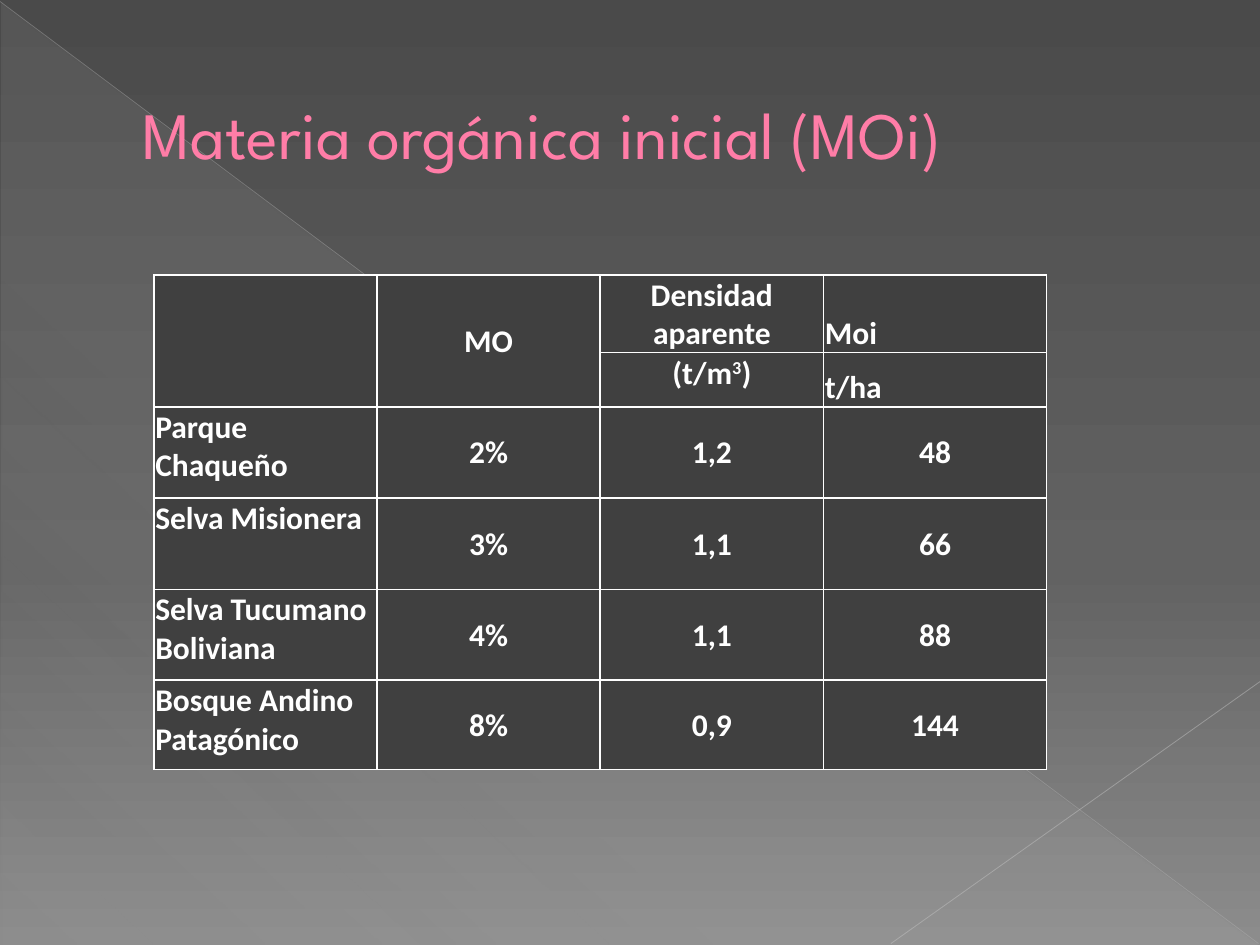
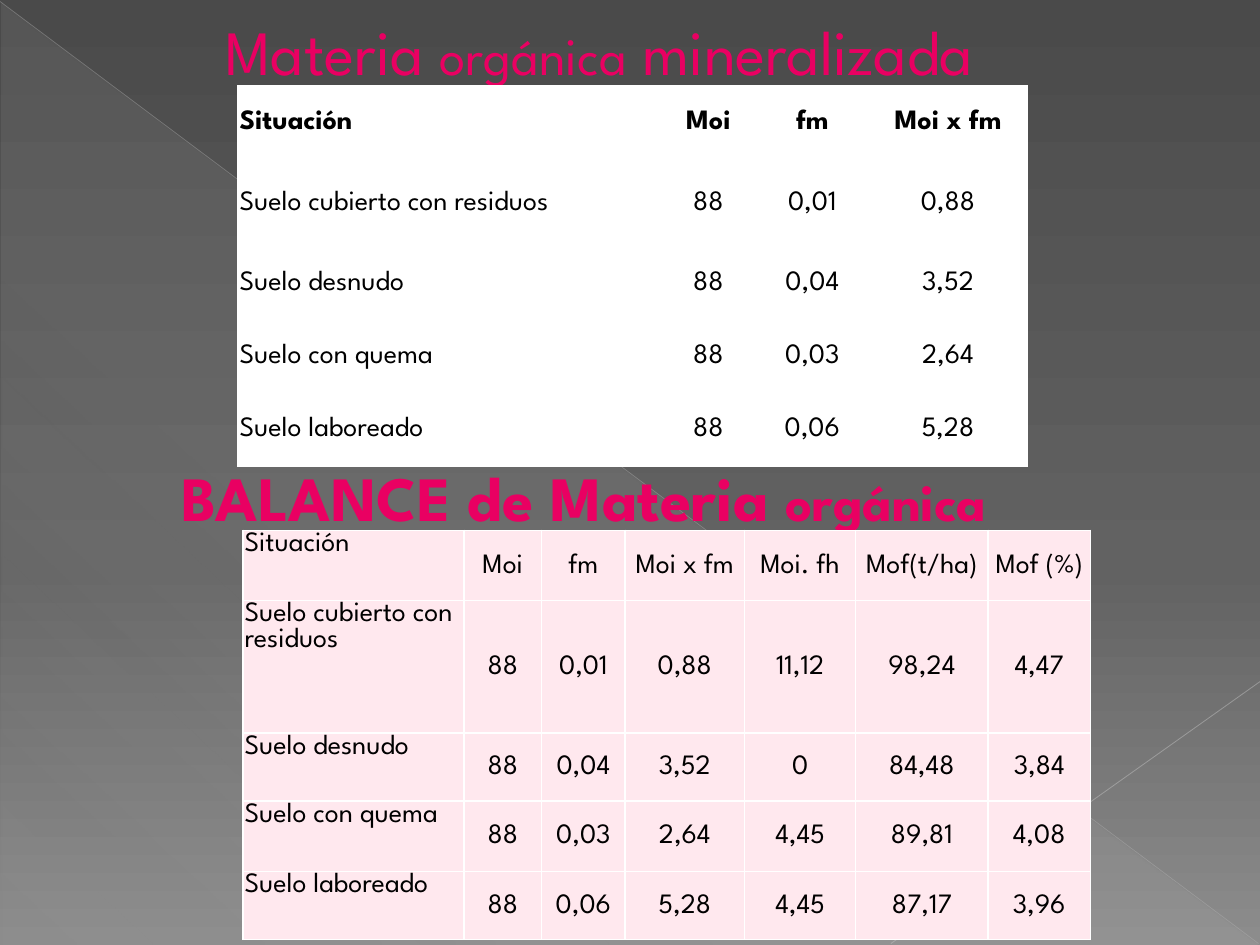
from dataclasses import dataclass, field

from lxml.etree import SubElement
from pptx import Presentation
from pptx.dml.color import RGBColor
from pptx.enum.shapes import MSO_CONNECTOR, MSO_SHAPE
from pptx.enum.text import MSO_ANCHOR, PP_ALIGN
from pptx.oxml import parse_xml
from pptx.oxml.ns import nsdecls, qn
from pptx.util import Cm, Pt

COLORS = {
    "bg_top": "4A4A4A", "bg_mid": "626262", "bg_bottom": "8C8C8C",
    "veil": "D2D2D2", "diagonal": "BFBFBF", "corner": "C6C6C6",
    "title": "FF7DA7", "title_edge": "B12761", "heading": "E90062",
    "dark": "404040", "white": "FFFFFF", "black": "000000", "pale_pink": "FFE8EE",
}
TITLE_FONT = "League Spartan"
TABLE_FONT = "Calibri"
LEFT_TOP = (PP_ALIGN.LEFT, MSO_ANCHOR.TOP)
LEFT_MIDDLE = (PP_ALIGN.LEFT, MSO_ANCHOR.MIDDLE)
LEFT_BOTTOM = (PP_ALIGN.LEFT, MSO_ANCHOR.BOTTOM)
CENTER_TOP = (PP_ALIGN.CENTER, MSO_ANCHOR.TOP)
CENTER_MIDDLE = (PP_ALIGN.CENTER, MSO_ANCHOR.MIDDLE)


@dataclass
class Run:
    text: str
    size: float
    bold: bool = False
    superscript: bool = False


@dataclass
class Line:
    start: tuple[float, float]
    end: tuple[float, float]
    color: str
    width: float
    opacity: int


@dataclass
class Heading:
    left: float
    top: float
    runs: list[Run]


@dataclass
class Grid:
    """Lengths in cm; a cell is a string or a list of runs."""
    left: float
    top: float
    cols: list[float]
    rows: list[float]
    cells: list[list]
    fill: str
    color: str
    font: str
    size: float
    bold_rows: int = 0
    first_col: tuple = LEFT_TOP
    placing: dict = field(default_factory=dict)
    merges: list = field(default_factory=list)


BACKDROP_LINES = [
    Line((0, 0.03), (25.37, 19.02), "diagonal", 0.39, 35),
    Line((25.4, 13.74), (17.96, 19.02), "corner", 0.47, 45),
]

INITIAL_MATTER = Grid(
    3.1, 5.54, [4.5] * 4, [1.57, 1.09, 1.84, 1.84, 1.83, 1.8],
    [
        ["", "MO", "Densidad aparente", "Moi"],
        ["", "", [Run("(t/m", 18, True), Run("3", 18, True, True), Run(")", 18, True)], "t/ha"],
        ["Parque Chaqueño", "2%", "1,2", "48"],
        ["Selva Misionera", "3%", "1,1", "66"],
        ["Selva Tucumano Boliviana", "4%", "1,1", "88"],
        ["Bosque Andino Patagónico", "8%", "0,9", "144"],
    ],
    "dark", "white", TABLE_FONT, 18, bold_rows=6,
    placing={(0, 2): CENTER_TOP, (1, 2): CENTER_TOP, (0, 3): LEFT_BOTTOM, (1, 3): LEFT_BOTTOM},
    merges=[((0, 0), (1, 0)), ((0, 1), (1, 1))],
)

MINERALIZED = Grid(
    4.8, 1.73, [8.53, 1.9, 2.29, 3.18], [1.47, 1.78, 1.47, 1.47, 1.47],
    [
        ["Situación", "Moi", "fm", "Moi x fm"],
        ["Suelo cubierto con residuos", "88", "0,01", "0,88"],
        ["Suelo desnudo", "88", "0,04", "3,52"],
        ["Suelo con quema", "88", "0,03", "2,64"],
        ["Suelo laboreado", "88", "0,06", "5,28"],
    ],
    "white", "black", TITLE_FONT, 16, bold_rows=1, first_col=LEFT_MIDDLE,
)

# The balance extends each mineralization row with three more columns
BALANCE_COLUMNS = [
    ["Moi. fh", "Mof(t/ha)", "Mof (%)"],
    ["11,12", "98,24", "4,47"],
    ["0", "84,48", "3,84"],
    ["4,45", "89,81", "4,08"],
    ["4,45", "87,17", "3,96"],
]
BALANCE = Grid(
    4.9, 10.69, [4.45, 1.57, 1.68, 2.41, 2.24, 2.67, 2.06], [1.42, 2.67, 1.37, 1.42, 1.37],
    [base + extra for base, extra in zip(MINERALIZED.cells, BALANCE_COLUMNS)],
    "pale_pink", "black", TITLE_FONT, 16,
)

HEADINGS = [
    Heading(4.29, 0.13, [Run("Materia ", 36), Run("orgánica", 30), Run(" mineralizada", 36)]),
    Heading(3.4, 9.12, [Run("BALANCE de Materia ", 36, True), Run("orgánica", 30, True)]),
]


def rgb(name: str) -> RGBColor:
    return RGBColor.from_string(COLORS[name])


def gradient(stops: list[tuple[int, str, int]], angle: int):
    """Gradient fill from (position %, colour, opacity %) stops."""
    gs = "".join(
        f'<a:gs pos="{pos * 1000}"><a:srgbClr val="{COLORS[color]}">'
        f'<a:alpha val="{opacity * 1000}"/></a:srgbClr></a:gs>'
        for pos, color, opacity in stops
    )
    return parse_xml(f'<a:gradFill {nsdecls("a")} rotWithShape="1"><a:gsLst>{gs}</a:gsLst>'
                     f'<a:lin ang="{angle * 60000}" scaled="0"/></a:gradFill>')


def replace_solid_fill(parent, fill) -> None:
    parent.replace(parent.find(qn("a:solidFill")), fill)


def edge(tag: str, color: str, width: float):
    return parse_xml(f'<a:{tag} {nsdecls("a")} w="{Pt(width)}"><a:solidFill>'
                     f'<a:srgbClr val="{COLORS[color]}"/></a:solidFill></a:{tag}>')


def add_runs(p, runs: list[Run], font: str, color: str) -> None:
    for run in runs:
        r = p.add_run()
        r.text = run.text
        r.font.name = font
        r.font.size = Pt(run.size)
        r.font.bold = run.bold
        r.font.color.rgb = rgb(color)
        if run.superscript:
            r.font._element.set("baseline", "30000")


def draw_line(s, line: Line) -> None:
    c = s.shapes.add_connector(MSO_CONNECTOR.STRAIGHT, *map(Cm, line.start + line.end))
    c.line.color.rgb = rgb(line.color)
    c.line.width = Pt(line.width)
    clr = c._element.spPr.find(".//" + qn("a:srgbClr"))
    SubElement(clr, qn("a:alpha")).set("val", str(line.opacity * 1000))
    SubElement(c._element.spPr, qn("a:effectLst"))


def add_slide(prs):
    """Blank slide with the shared gradient, veil and diagonal lines."""
    s = prs.slides.add_slide(prs.slide_layouts[6])
    s.background.fill.solid()
    replace_solid_fill(s._element.cSld.bg.bgPr, gradient(
        [(0, "bg_top", 100), (60, "bg_mid", 100), (100, "bg_bottom", 100)], 90))
    veil = s.shapes.add_shape(MSO_SHAPE.RIGHT_TRIANGLE, Cm(0.03), Cm(0.05), Cm(25.35), Cm(19))
    veil.shadow.inherit = False
    veil.line.fill.background()
    veil.fill.solid()
    replace_solid_fill(veil._element.spPr, gradient(
        [(0, "veil", 10), (70, "veil", 8), (100, "veil", 1)], 133))
    for line in BACKDROP_LINES:
        draw_line(s, line)
    return s


def draw_title(s, text: str) -> None:
    sp = s.shapes.add_textbox(Cm(1.27), Cm(0.74), Cm(22.86), Cm(3.89))
    tf = sp.text_frame
    tf.word_wrap = True
    tf.vertical_anchor = MSO_ANCHOR.MIDDLE
    tf.margin_left = Cm(1.6)
    p = tf.paragraphs[0]
    add_runs(p, [Run(text, 37.8)], TITLE_FONT, "title")
    p.runs[0].font._element.insert(0, edge("ln", "title_edge", 0.5))


def draw_heading(s, heading: Heading) -> None:
    sp = s.shapes.add_textbox(Cm(heading.left), Cm(heading.top), Cm(18.59), Cm(1.8))
    tf = sp.text_frame
    tf.word_wrap = True
    add_runs(tf.paragraphs[0], heading.runs, TITLE_FONT, "heading")


def draw_cell(cell, grid: Grid, row: int, col: int) -> None:
    default = CENTER_MIDDLE if col else grid.first_col
    align, cell.vertical_anchor = grid.placing.get((row, col), default)
    cell.margin_left = cell.margin_right = cell.margin_top = Cm(0.03)
    cell.margin_bottom = 0
    cell.fill.solid()
    cell.fill.fore_color.rgb = rgb(grid.fill)
    for i, tag in enumerate(("lnL", "lnR", "lnT", "lnB")):
        cell._tc.get_or_add_tcPr().insert(i, edge(tag, "white", 1))
    content = grid.cells[row][col]
    if isinstance(content, str):
        content = [Run(content, grid.size, row < grid.bold_rows)] if content else []
    p = cell.text_frame.paragraphs[0]
    p.alignment = align
    add_runs(p, content, grid.font, grid.color)


def draw_grid(s, grid: Grid) -> None:
    frame = s.shapes.add_table(len(grid.rows), len(grid.cols), Cm(grid.left), Cm(grid.top),
                               Cm(sum(grid.cols)), Cm(sum(grid.rows)))
    table = frame.table
    table.first_row = table.horz_banding = False
    for column, width in zip(table.columns, grid.cols):
        column.width = Cm(width)
    for row, height in zip(table.rows, grid.rows):
        row.height = Cm(height)
    for row in range(len(grid.rows)):
        for col in range(len(grid.cols)):
            draw_cell(table.cell(row, col), grid, row, col)
    for first, last in grid.merges:
        table.cell(*first).merge(table.cell(*last))


def main() -> None:
    prs = Presentation()
    prs.slide_width, prs.slide_height = Cm(25.4), Cm(19.05)

    # Initial organic matter
    s = add_slide(prs)
    draw_title(s, "Materia orgánica inicial (MOi)")
    draw_grid(s, INITIAL_MATTER)

    # Mineralized matter and balance
    s = add_slide(prs)
    for heading, grid in zip(HEADINGS, (MINERALIZED, BALANCE)):
        draw_heading(s, heading)
        draw_grid(s, grid)

    prs.save("out.pptx")


if __name__ == "__main__":
    main()
